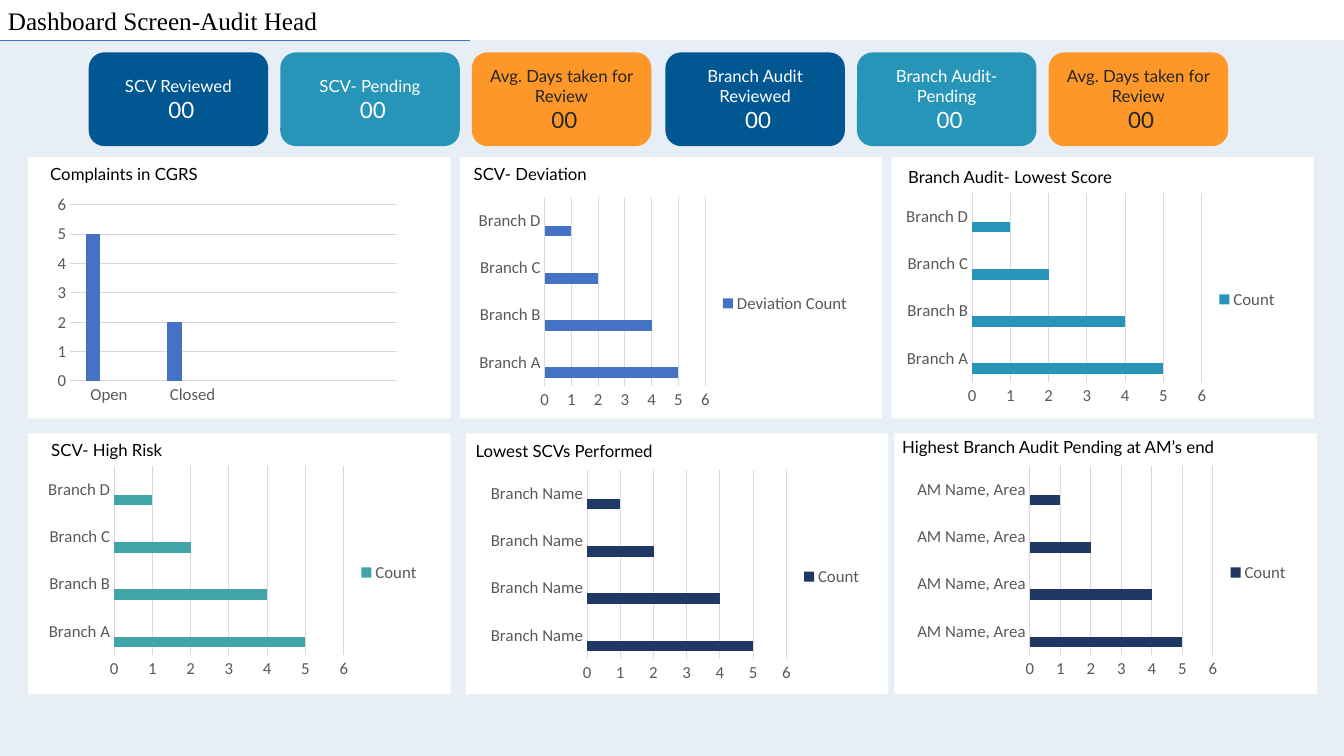
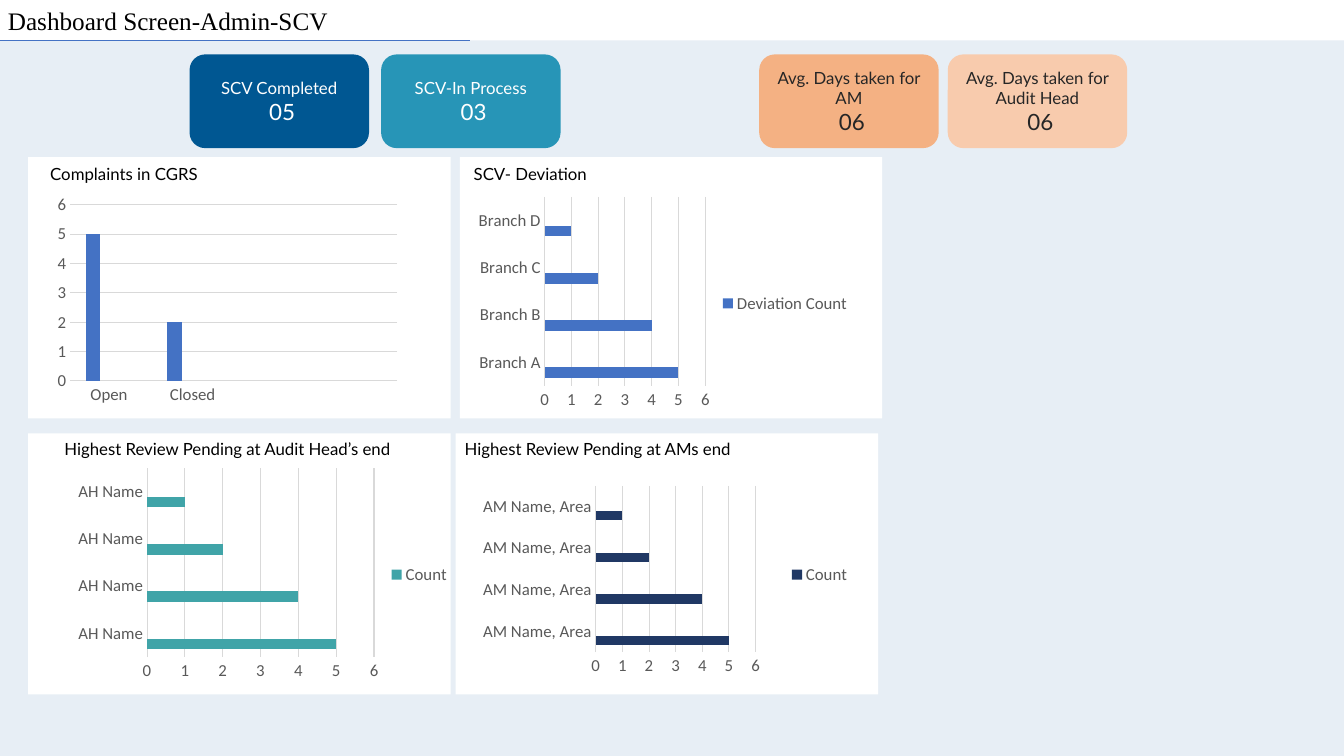
"""Build two audit dashboard slides with count cards and chart panels."""
from dataclasses import dataclass

from lxml import etree
from pptx import Presentation
from pptx import util as u
from pptx.chart.chart import Chart
from pptx.chart.data import CategoryChartData
from pptx.dml.color import RGBColor
from pptx.enum import chart as chart_enum
from pptx.enum import shapes, text
from pptx.oxml import ns
from pptx.shapes.autoshape import Shape
from pptx.slide import Slide
from pptx.text.text import _Paragraph as Paragraph


@dataclass(frozen=True)
class Theme:
    """Colours, fonts and type sizes of the dashboard."""
    canvas: str = "E7EEF5"
    white: str = "FFFFFF"
    black: str = "000000"
    dark_text: str = "262626"
    chart_text: str = "595959"
    grid: str = "D9D9D9"
    accent: str = "4472C4"
    blue: str = "005792"
    cyan: str = "2795B7"
    orange: str = "FD9727"
    peach: str = "F4B183"
    pale_peach: str = "F8CBAD"
    teal: str = "40A4A8"
    navy: str = "203864"
    title_font: str = "Times New Roman"
    body_font: str = "Lato"
    chart_font: str = "Calibri"
    title_size: int = 18
    value_size: int = 16
    body_size: int = 12


@dataclass(frozen=True)
class Grid:
    """Slide size and the pitch and size of panels and cards, in inches."""
    width: float = 13.33
    height: float = 7.5
    band: float = 0.4
    rule_share: float = 0.35
    panel_left: float = 0.28
    panel_top: float = 1.56
    column_pitch: float = 4.28
    row_pitch: float = 2.74
    panel_width: float = 4.19
    panel_height: float = 2.59
    card_width: float = 1.78
    card_height: float = 0.93


THEME = Theme()
GRID = Grid()


@dataclass(frozen=True)
class Card:
    """A rounded count card."""
    label: str
    value: str
    fill: str
    color: str = THEME.white


@dataclass(frozen=True)
class CardGroup:
    """A run of cards at an equal pitch."""
    left: float
    top: float
    cards: tuple[Card, ...]
    pitch: float = 1.9


@dataclass(frozen=True)
class Panel:
    """A white panel on the grid with a heading and a chart, both inset from its corner."""
    column: int
    row: int
    heading: str
    color: str
    categories: tuple[str, ...]
    heading_inset: tuple[float, float]
    chart_inset: tuple[float, float]
    legend: str = "Count"
    shift: float = 0
    is_column: bool = False
    plot_area: tuple[float, ...] = ()


@dataclass(frozen=True)
class Dashboard:
    """The content of one slide."""
    title: str
    groups: tuple[CardGroup, ...]
    panels: tuple[Panel, ...]


BRANCHES = ("Branch A", "Branch B", "Branch C", "Branch D")
AREA_MANAGERS = ("AM Name, Area",) * 4
REVIEW_DAYS = Card("Avg. Days taken for Review", "00", THEME.orange, THEME.dark_text)
SHARED_PANELS = (
    Panel(0, 0, "Complaints in CGRS", THEME.accent, ("Open ", "Closed", "", ""),
          (0.12, 0.02), (0.22, 0.33), is_column=True),
    Panel(1, 0, "SCV- Deviation", THEME.accent, BRANCHES,
          (0.04, 0.02), (0.11, 0.35), "Deviation Count"),
)
DASHBOARDS = (
    Dashboard(
        "Dashboard Screen-Audit Head",
        (
            CardGroup(0.88, 0.52, (
                Card("SCV Reviewed", "00", THEME.blue),
                Card("SCV- Pending", "00", THEME.cyan),
                REVIEW_DAYS)),
            CardGroup(6.6, 0.52, (
                Card("Branch Audit Reviewed", "00", THEME.blue),
                Card("Branch Audit- Pending", "00", THEME.cyan),
                REVIEW_DAYS)),
        ),
        SHARED_PANELS + (
            Panel(2, 0, "Branch Audit- Lowest Score", THEME.cyan, BRANCHES,
                  (0.07, 0.05), (0.07, 0.31)),
            Panel(0, 1, "SCV- High Risk", THEME.teal, BRANCHES,
                  (0.13, 0.01), (0.12, 0.28)),
            Panel(1, 1, "Lowest SCVs Performed", THEME.navy, ("Branch Name",) * 4,
                  (0, 0.02), (0.17, 0.32), shift=0.06),
            Panel(2, 1, "Highest Branch Audit Pending at AM’s end", THEME.navy,
                  AREA_MANAGERS, (-0.02, -0.02), (0.15, 0.28), shift=0.03),
        ),
    ),
    Dashboard(
        "Dashboard Screen-Admin-SCV",
        (
            CardGroup(1.88, 0.54, (
                Card("SCV Completed", "05", THEME.blue),
                Card("SCV-In Process", "03", THEME.cyan))),
            CardGroup(7.53, 0.54, (
                Card("Avg. Days taken for AM", "06", THEME.peach, THEME.dark_text),
                Card("Avg. Days taken for Audit Head", "06", THEME.pale_peach,
                     THEME.dark_text)), 1.87),
        ),
        SHARED_PANELS + (
            Panel(0, 1, "Highest Review Pending at Audit Head’s end", THEME.teal,
                  ("AH Name",) * 4, (0.26, 0), (0.42, 0.3)),
            Panel(1, 1, "Highest Review Pending at AMs end", THEME.navy, AREA_MANAGERS,
                  (-0.01, 0), (0.15, 0.3), shift=-0.04,
                  plot_area=(0.32, 0.1, 0.41, 0.75)),
        ),
    ),
)


def rgb(color: str) -> RGBColor:
    """Turn a hex string into a colour."""
    return RGBColor.from_string(color)


def inches(*lengths: float) -> list[u.Length]:
    """Turn inches into slide lengths."""
    return [u.Inches(length) for length in lengths]


def style(paragraph: Paragraph, size: int, font_name: str, color: str) -> None:
    """Set the font of a whole paragraph."""
    paragraph.font.size = u.Pt(size)
    paragraph.font.name = font_name
    paragraph.font.color.rgb = rgb(color)


def add_block(slide: Slide, kind: shapes.MSO_SHAPE, fill: str, *box: float) -> Shape:
    """Draw a flat filled shape without outline."""
    shape = slide.shapes.add_shape(kind, *inches(*box))
    shape.shadow.inherit = False
    shape.fill.solid()
    shape.fill.fore_color.rgb = rgb(fill)
    shape.line.fill.background()
    return shape


def add_label(slide: Slide, content: str, size: int, font_name: str, *box: float) -> None:
    """Draw one line of black text."""
    frame = slide.shapes.add_textbox(*inches(*box)).text_frame
    frame.word_wrap = True
    frame.auto_size = text.MSO_AUTO_SIZE.SHAPE_TO_FIT_TEXT
    frame.text = content
    style(frame.paragraphs[0], size, font_name, THEME.black)


def add_frame(slide: Slide, title: str) -> None:
    """Draw the canvas, slide title and the rule beneath it."""
    add_block(slide, shapes.MSO_SHAPE.RECTANGLE, THEME.canvas,
              0, GRID.band, GRID.width, GRID.height - GRID.band)
    add_label(slide, title, THEME.title_size, THEME.title_font, -0.02, 0, 5.05, GRID.band)
    rule = slide.shapes.add_connector(
        shapes.MSO_CONNECTOR.STRAIGHT,
        *inches(0, GRID.band, GRID.width * GRID.rule_share, GRID.band))
    rule.line.color.rgb = rgb(THEME.accent)
    rule.line.width = u.Pt(0.5)
    etree.SubElement(rule._element.spPr, ns.qn("a:effectLst"))


def add_cards(slide: Slide, group: CardGroup) -> None:
    """Draw a run of count cards."""
    for index, card in enumerate(group.cards):
        shape = add_block(slide, shapes.MSO_SHAPE.ROUNDED_RECTANGLE, card.fill,
                          group.left + index * group.pitch, group.top,
                          GRID.card_width, GRID.card_height)
        frame = shape.text_frame
        frame.vertical_anchor = text.MSO_ANCHOR.MIDDLE
        frame.text = f"{card.label}\n {card.value}"
        for paragraph, size in zip(frame.paragraphs, (THEME.body_size, THEME.value_size)):
            paragraph.alignment = text.PP_ALIGN.CENTER
            style(paragraph, size, THEME.body_font, card.color)


def set_plot_area(chart: Chart, shares: tuple[float, ...]) -> None:
    """Fix the inner plot area as shares of the chart."""
    area = chart._chartSpace.chart.plotArea
    for layout in area.findall(ns.qn("c:layout")):
        area.remove(layout)
    layout = etree.Element(ns.qn("c:layout"))
    manual = etree.SubElement(layout, ns.qn("c:manualLayout"))
    settings = [("layoutTarget", "inner"), ("xMode", "edge"), ("yMode", "edge")]
    for tag, value in settings + list(zip("xywh", shares)):
        etree.SubElement(manual, ns.qn(f"c:{tag}")).set("val", str(value))
    area.insert(0, layout)


def add_legend(chart: Chart) -> None:
    """Show a legend on the right with the empty series left out."""
    chart.has_legend = True
    chart.legend.position = chart_enum.XL_LEGEND_POSITION.RIGHT
    chart.legend.include_in_layout = False
    for index in range(2):
        entry = etree.Element(ns.qn("c:legendEntry"))
        etree.SubElement(entry, ns.qn("c:idx")).set("val", str(index))
        etree.SubElement(entry, ns.qn("c:delete")).set("val", "1")
        chart.legend._element.insert(index + 1, entry)


def add_chart(slide: Slide, panel: Panel, left: float, top: float) -> None:
    """Draw the bar or column chart of a panel."""
    data = CategoryChartData()
    data.categories = panel.categories
    data.add_series(panel.legend, (5, 2, None, None) if panel.is_column else (5, 4, 2, 1))
    for name in ("Series 2", "Series 3"):
        data.add_series(name, (None,) * 4)
    kinds = chart_enum.XL_CHART_TYPE
    kind = kinds.COLUMN_CLUSTERED if panel.is_column else kinds.BAR_CLUSTERED
    size = (3.51, 2.17) if panel.is_column else (3.87, 2.2)
    chart = slide.shapes.add_chart(kind, *inches(left, top, *size), data).chart
    chart.has_title = False
    chart.has_legend = False
    chart.font.size = u.Pt(THEME.body_size)
    chart.font.name = THEME.chart_font
    chart.font.color.rgb = rgb(THEME.chart_text)
    plot = chart.plots[0]
    plot.vary_by_categories = False
    plot.gap_width = 219 if panel.is_column else 150
    if panel.is_column:
        plot.overlap = -27
    else:
        add_legend(chart)
    for series, color in zip(plot.series, (panel.color, "ED7D31", "A5A5A5")):
        series.format.fill.solid()
        series.format.fill.fore_color.rgb = rgb(color)
    values = chart.value_axis
    values.minimum_scale, values.maximum_scale, values.major_unit = 0, 6, 1
    values.format.line.fill.background()
    for axis in (chart.category_axis, values):
        axis.major_tick_mark = chart_enum.XL_TICK_MARK.NONE
    for line in (chart.category_axis.format.line, values.major_gridlines.format.line):
        line.color.rgb = rgb(THEME.grid)
        line.width = u.Pt(0.75)
    if panel.plot_area:
        set_plot_area(chart, panel.plot_area)


def add_panel(slide: Slide, panel: Panel) -> None:
    """Draw a panel with its heading and chart."""
    left = GRID.panel_left + panel.column * GRID.column_pitch + panel.shift
    top = GRID.panel_top + panel.row * GRID.row_pitch
    add_block(slide, shapes.MSO_SHAPE.RECTANGLE, THEME.white,
              left, top, GRID.panel_width, GRID.panel_height)
    across, down = panel.heading_inset
    add_label(slide, panel.heading, THEME.body_size, THEME.body_font,
              left + across, top + down, 3.7, 0.3)
    across, down = panel.chart_inset
    add_chart(slide, panel, left + across, top + down)


def main() -> None:
    """Build and save the presentation."""
    presentation = Presentation()
    presentation.slide_width, presentation.slide_height = inches(GRID.width, GRID.height)
    for dashboard in DASHBOARDS:
        slide = presentation.slides.add_slide(presentation.slide_layouts[6])
        add_frame(slide, dashboard.title)
        for group in dashboard.groups:
            add_cards(slide, group)
        for panel in dashboard.panels:
            add_panel(slide, panel)
    presentation.save("out.pptx")


if __name__ == "__main__":
    main()
